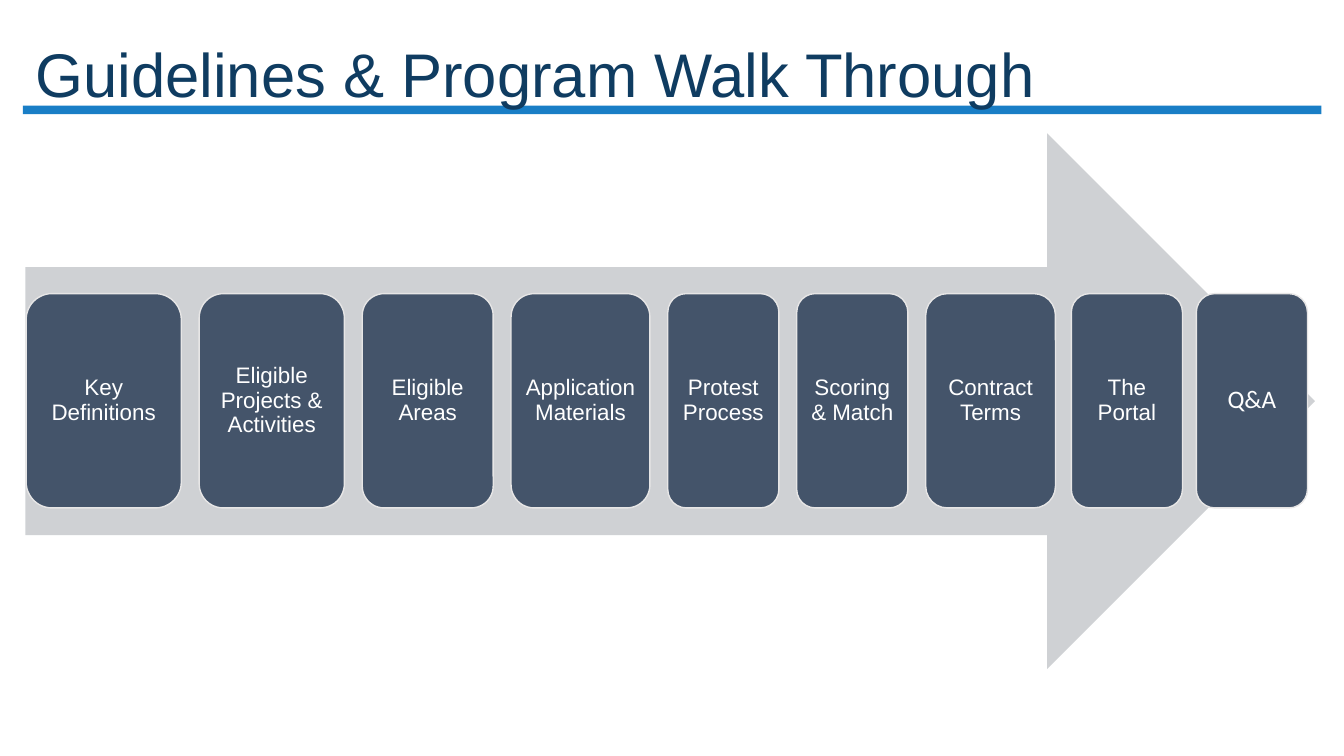
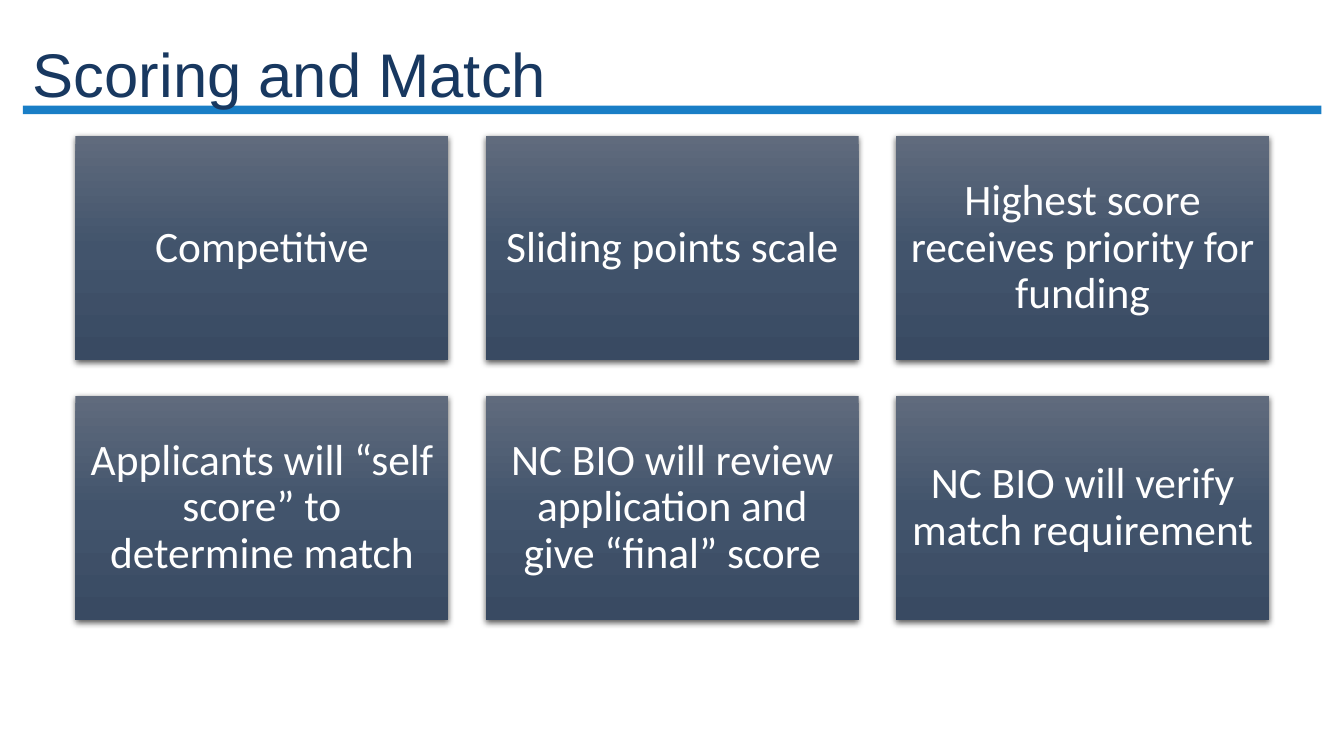
from copy import deepcopy

from lxml.etree import SubElement
from pptx import Presentation
from pptx.dml.color import RGBColor
from pptx.enum.shapes import MSO_CONNECTOR, MSO_SHAPE
from pptx.enum.text import MSO_ANCHOR, PP_ALIGN
from pptx.oxml.ns import qn
from pptx.util import Cm, Pt

WHITE = "FFFFFF"
RULE_BLUE = "0070C0"
ARROW_GREY = "CFD1D4"
STEP_FILL = "44546A"
STEP_EDGE = "E7E6E6"
CARD_GRADIENT = ["606B7D", "42546C", "394A62"]

STEP_TOP, STEP_HEIGHT = 7.4, 5.4
# label, width, gap before, font, size
STEPS = [
    ("Key Definitions", 3.91, 0, "Arial", 16),
    ("Eligible Projects & Activities", 3.66, 0.45, "Arial", 16),
    ("Eligible Areas", 3.3, 0.45, "Arial", 16),
    ("Application Materials", 3.5, 0.45, "Arial", 16),
    ("Protest Process", 2.8, 0.45, "Arial", 16),
    ("Scoring & Match", 2.8, 0.45, "Arial", 16),
    ("Contract Terms", 3.27, 0.45, "Arial", 16),
    ("The Portal", 2.8, 0.4, "Arial", 16),
    ("Q&A", 2.8, 0.35, "Calibri", 18),
]

CARD_COLUMNS = 3
CARD_LEFT, CARD_TOP = 1.9, 3.43
CARD_WIDTH, CARD_HEIGHT = 9.4, 5.64
CARD_STEP_X, CARD_STEP_Y = 10.34, 6.55
CARDS = [
    "Competitive",
    "Sliding points scale",
    "Highest score receives priority for funding",
    "Applicants will “self score” to determine match",
    "NC BIO will review application and give “final” score",
    "NC BIO will verify match requirement",
]


def color(value):
    return RGBColor.from_string(value)


class Deck:
    """Holds the presentation, its style and the current slide."""

    def __init__(self):
        self.presentation = Presentation()
        self.presentation.slide_width = Cm(33.87)
        self.presentation.slide_height = Cm(19.05)
        self.slide = None

    def add_slide(self, title, title_color, title_left):
        layout = self.presentation.slide_layouts[6]
        self.slide = self.presentation.slides.add_slide(layout)
        self.rule()
        box = self.slide.shapes.add_textbox(
            Cm(title_left), Cm(1.02), Cm(30.9), Cm(1.88))
        self.set_text(box, title, "Arial", 44, title_color, PP_ALIGN.LEFT)

    def rule(self):
        line = self.slide.shapes.add_connector(
            MSO_CONNECTOR.STRAIGHT, Cm(33.3), Cm(2.77), Cm(0.58), Cm(2.77))
        line.line.color.rgb = color(RULE_BLUE)
        line.line.width = Pt(6)
        properties = line._element.spPr
        SubElement(properties.find(".//" + qn("a:srgbClr")),
                   qn("a:alpha"), val="90000")
        SubElement(properties, qn("a:effectLst"))

    def set_text(self, shape, text, font, size, text_color,
                 align=PP_ALIGN.CENTER, margin=None):
        frame = shape.text_frame
        frame.text = text
        frame.word_wrap = True
        frame.vertical_anchor = MSO_ANCHOR.MIDDLE
        if margin is not None:
            frame.margin_left = frame.margin_right = Cm(margin)
            frame.margin_top = frame.margin_bottom = Cm(margin)
        paragraph = frame.paragraphs[0]
        paragraph.alignment = align
        paragraph.line_spacing = 0.9
        style = paragraph.runs[0].font
        style.name, style.size = font, Pt(size)
        style.color.rgb = color(text_color)

    def shape(self, kind, left, top, width, height, fill=None):
        """Add a preset shape with no outline and no shadow."""
        shape = self.slide.shapes.add_shape(
            kind, Cm(left), Cm(top), Cm(width), Cm(height))
        shape.shadow.inherit = False
        shape.line.fill.background()
        if fill:
            shape.fill.solid()
            shape.fill.fore_color.rgb = color(fill)
        return shape

    def step(self, text, left, width, font, size):
        step = self.shape(MSO_SHAPE.ROUNDED_RECTANGLE, left, STEP_TOP,
                          width, STEP_HEIGHT, STEP_FILL)
        step.line.color.rgb = color(STEP_EDGE)
        step.line.width = Pt(1)
        self.set_text(step, text, font, size, WHITE, margin=0.17)

    def card(self, text, left, top):
        card = self.shape(MSO_SHAPE.RECTANGLE, left, top,
                          CARD_WIDTH, CARD_HEIGHT)
        self.shade(card)
        self.drop_shadow(card)
        self.set_text(card, text, "Calibri", 31, WHITE, margin=0.33)

    def shade(self, shape):
        """Fill from top to bottom with the three card colours."""
        shape.fill.gradient()
        shape.fill.gradient_angle = 270
        stop_list = shape._element.spPr.find(".//" + qn("a:gsLst"))
        stop_list.insert(1, deepcopy(stop_list[0]))
        for index, stop in enumerate(shape.fill.gradient_stops):
            stop.position = index / 2
            stop.color.rgb = color(CARD_GRADIENT[index])

    def drop_shadow(self, shape):
        effects = shape._element.spPr.find(qn("a:effectLst"))
        shadow = SubElement(
            effects, qn("a:outerShdw"), blurRad=str(Pt(4.5)),
            dist=str(Pt(1.5)), dir="5400000", algn="ctr", rotWithShape="0")
        shadow_color = SubElement(shadow, qn("a:srgbClr"), val="000000")
        SubElement(shadow_color, qn("a:alpha"), val="63000")


def add_walk_through(deck):
    deck.add_slide("Guidelines & Program Walk Through", "0F3C61", 0.64)
    deck.shape(MSO_SHAPE.RIGHT_ARROW, 0.64, 3.36, 32.5, 13.5, ARROW_GREY)
    left = 0.66
    for text, width, gap, font, size in STEPS:
        left += gap
        deck.step(text, left, width, font, size)
        left += width


def add_scoring(deck):
    deck.add_slide("Scoring and Match", "183860", 0.58)
    for index, text in enumerate(CARDS):
        row, column = divmod(index, CARD_COLUMNS)
        deck.card(text, CARD_LEFT + column * CARD_STEP_X,
                  CARD_TOP + row * CARD_STEP_Y)


def main():
    deck = Deck()
    add_walk_through(deck)
    add_scoring(deck)
    deck.presentation.save("out.pptx")


if __name__ == "__main__":
    main()
